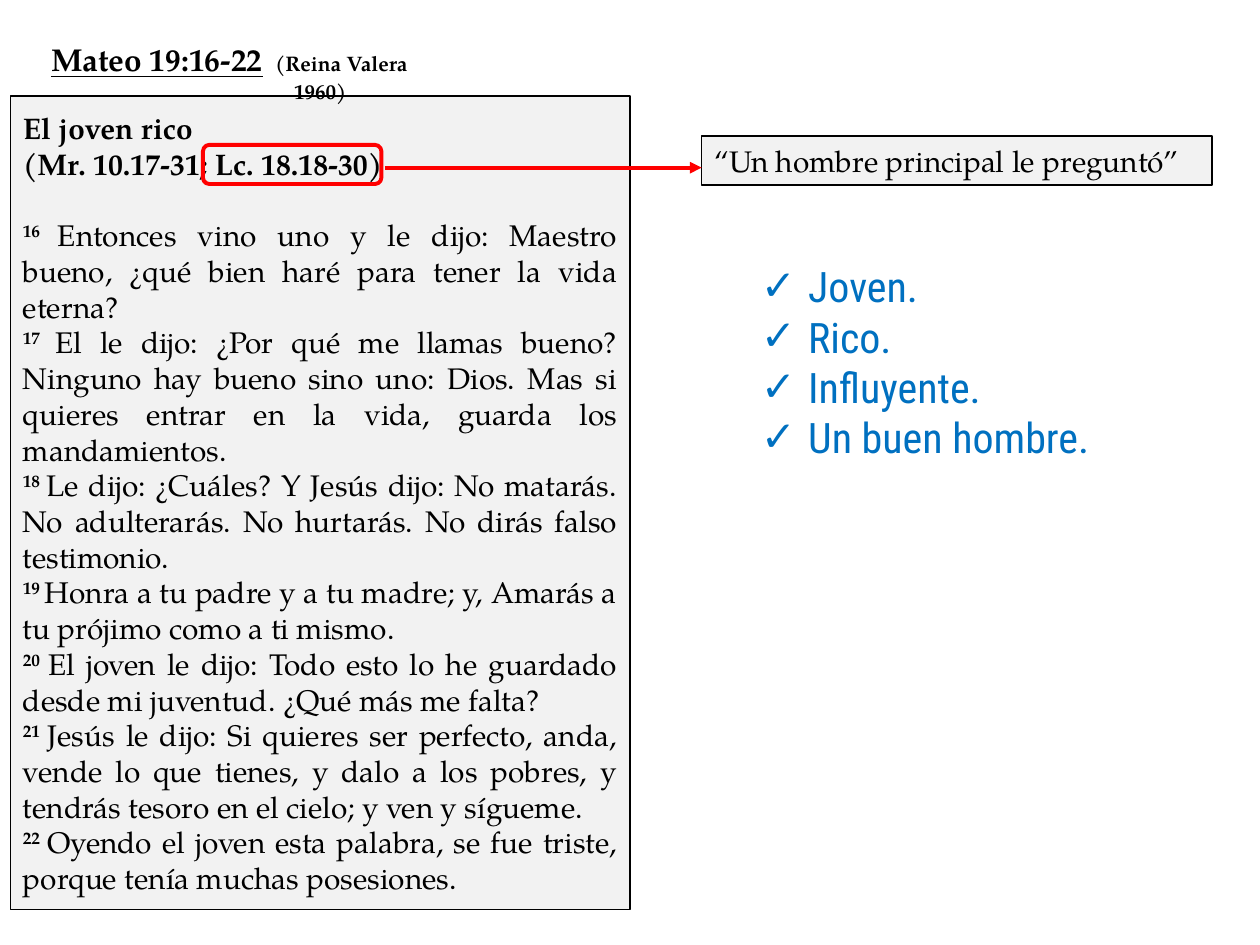
import dataclasses
import pptx
import pptx.util
import pptx.dml.color
import pptx.enum.shapes
import pptx.enum.text
import pptx.oxml

Pt = pptx.util.Pt
Kind = pptx.enum.shapes.MSO_SHAPE
Align = pptx.enum.text.PP_ALIGN
Anchor = pptx.enum.text.MSO_ANCHOR
NS = 'xmlns:a="http://schemas.openxmlformats.org/drawingml/2006/main"'


@dataclasses.dataclass
class Theme:
    serif: str = "TeX Gyre Pagella"
    sans: str = "Roboto Condensed"
    ink: str = "000000"
    paper: str = "F2F2F2"
    mark: str = "FF0000"
    blue: str = "0070C0"
    head: int = 18
    text: int = 17
    small: int = 12
    list: int = 24
    gap: float = 20.4


class Deck:
    """Holds the theme and the current slide, and draws each kind of element."""

    def __init__(self, theme):
        self.theme = theme
        self.file = pptx.Presentation()
        self.file.slide_width, self.file.slide_height = Pt(720), Pt(540)
        self.slide = self.file.slides.add_slide(self.file.slide_layouts[1])

    def color(self, code):
        return pptx.dml.color.RGBColor.from_string(code)

    def xml(self, tag):
        name, _, rest = tag.partition(" ")
        return pptx.oxml.parse_xml(f"<a:{name} {NS} {rest}/>")

    def run(self, para, text, size, bold=False, line=False, face=None, ink=None, lift=False):
        run = para.add_run()
        run.text = text
        font = run.font
        font.name, font.size = face or self.theme.serif, Pt(size)
        font.bold, font.underline = bold, line
        font.color.rgb = self.color(ink or self.theme.ink)
        if lift:
            font._element.set("baseline", "30000")

    def para(self, frame, first, align=Align.LEFT):
        para = frame.paragraphs[0] if first else frame.add_paragraph()
        para.alignment = align
        para.space_before = Pt(0)
        return para

    def holder(self, index, box):
        shape = self.slide.placeholders[index]
        shape.left, shape.top, shape.width, shape.height = map(Pt, box)
        self.slide.shapes._spTree.append(shape._element)
        frame = shape.text_frame
        frame.word_wrap = True
        frame.auto_size = pptx.enum.text.MSO_AUTO_SIZE.NONE
        frame.vertical_anchor = Anchor.TOP
        return frame

    def shape(self, kind, box, line, width, fill=None):
        shape = self.slide.shapes.add_shape(kind, *map(Pt, box))
        shape.shadow.inherit = False
        if fill:
            shape.fill.solid()
            shape.fill.fore_color.rgb = self.color(fill)
        else:
            shape.fill.background()
        shape.line.color.rgb = self.color(line)
        shape.line.width = Pt(width)
        frame = shape.text_frame
        frame.word_wrap = True
        frame.vertical_anchor = Anchor.MIDDLE
        return frame

    def title(self, box, name, source, rest):
        frame = self.holder(0, box)
        para = self.para(frame, True)
        props = para._p.get_or_add_pPr()
        props.set("marL", "0")
        props.set("indent", str(Pt(16)))
        tabs = self.xml("tabLst")
        tabs.append(self.xml(f'tab pos="{Pt(250)}" algn="l"'))
        props.append(tabs)
        self.run(para, name, self.theme.head, True, True)
        self.run(para, "\t" + source, self.theme.small, True)
        para = self.para(frame, False, Align.CENTER)
        self.run(para, rest, self.theme.small, True)

    def panel(self, box, heads, verses):
        theme = self.theme
        frame = self.shape(Kind.RECTANGLE, box, theme.ink, 1, theme.paper)
        for i, head in enumerate(heads):
            self.run(self.para(frame, i == 0, Align.JUSTIFY), head, theme.text, True)
        for i, verse in enumerate(verses):
            para = self.para(frame, False, Align.JUSTIFY)
            if i == 0:
                para.space_before = Pt(theme.gap)
            self.run(para, f"{16 + i} ", theme.text, True, lift=True)
            self.run(para, verse, theme.text)

    def note(self, box, text):
        theme = self.theme
        frame = self.shape(Kind.RECTANGLE, box, theme.ink, 0.75, theme.paper)
        self.run(self.para(frame, True), text, theme.text)

    def ring(self, box):
        self.shape(Kind.ROUNDED_RECTANGLE, box, self.theme.mark, 2.25)

    def arrow(self, *ends):
        link = self.slide.shapes.add_connector(
            pptx.enum.shapes.MSO_CONNECTOR.STRAIGHT, *map(Pt, ends))
        link.line.color.rgb = self.color(self.theme.mark)
        link.line.width = Pt(2.25)
        link.line._get_or_add_ln().append(self.xml('tailEnd type="triangle"'))
        link._element.spPr.append(self.xml("effectLst"))

    def checks(self, box, items):
        theme = self.theme
        frame = self.holder(1, box)
        for i, item in enumerate(items):
            para = self.para(frame, i == 0)
            props = para._p.get_or_add_pPr()
            props.set("marL", str(Pt(27)))
            props.set("indent", str(Pt(-27)))
            props.append(self.xml('buChar char="✓"'))
            self.run(para, item, theme.list, face=theme.sans, ink=theme.blue)


def main():
    deck = Deck(Theme())
    deck.panel((6, 54.8, 354, 465), ("El joven rico", "(Mr. 10.17-31; Lc. 18.18-30)"), (
        "Entonces vino uno y le dijo: Maestro bueno, ¿qué bien haré para tener la vida eterna?",
        "El le dijo: ¿Por qué me llamas bueno? Ninguno hay bueno sino uno: Dios. "
        "Mas si quieres entrar en la vida, guarda los mandamientos.",
        "Le dijo: ¿Cuáles? Y Jesús dijo: No matarás. No adulterarás. No hurtarás. "
        "No dirás falso testimonio.",
        "Honra a tu padre y a tu madre; y, Amarás a tu prójimo como a ti mismo.",
        "El joven le dijo: Todo esto lo he guardado desde mi juventud. ¿Qué más me falta?",
        "Jesús le dijo: Si quieres ser perfecto, anda, vende lo que tienes, y dalo a los "
        "pobres, y tendrás tesoro en el cielo; y ven y sígueme.",
        "Oyendo el joven esta palabra, se fue triste, porque tenía muchas posesiones.",
    ))
    deck.title((6, 19.4, 354, 29), "Mateo 19:16-22", "(Reina Valera", "1960)")
    deck.ring((116, 82.8, 102, 22.4))
    deck.note((401, 77.8, 291.6, 28), "“Un hombre principal le preguntó”")
    deck.arrow(220, 95.8, 401, 95.8)
    deck.checks((427.6, 145.4, 238.4, 124),
                ("Joven.", "Rico.", "Influyente.", "Un buen hombre."))
    deck.file.save("out.pptx")


if __name__ == "__main__":
    main()
